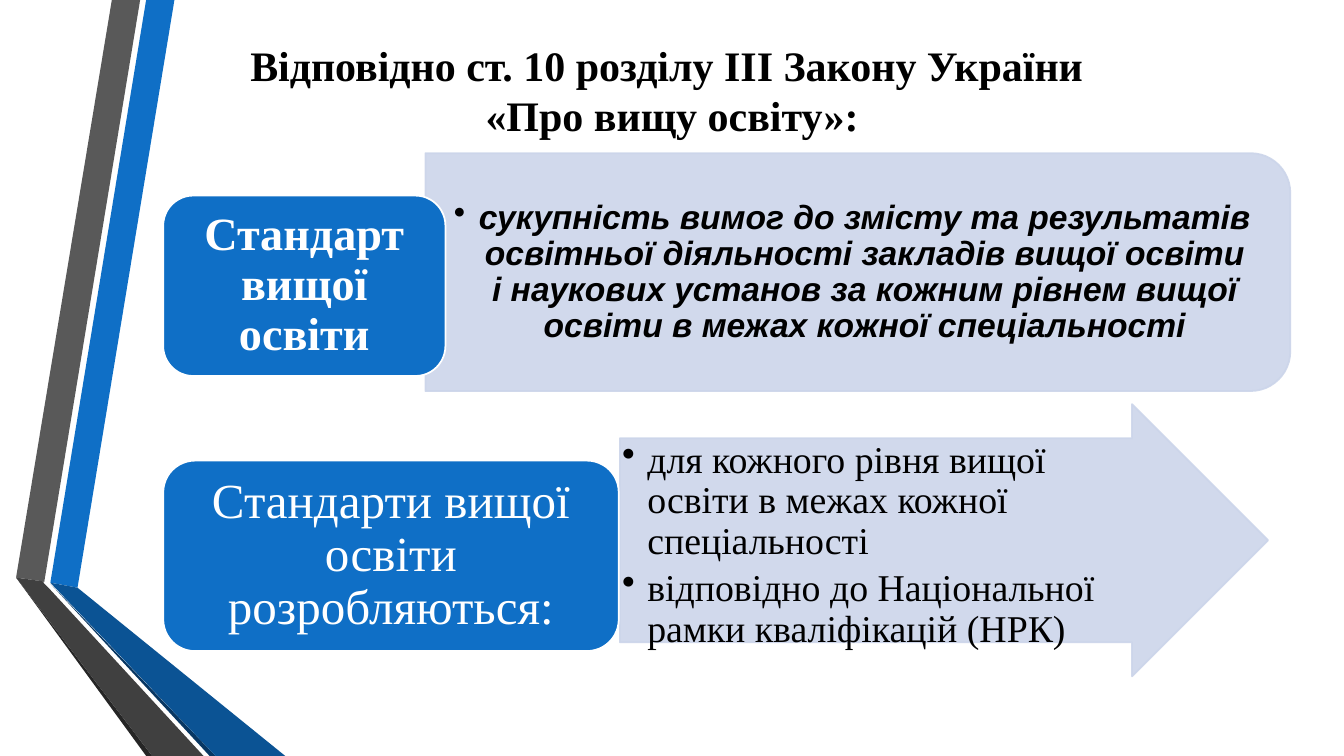
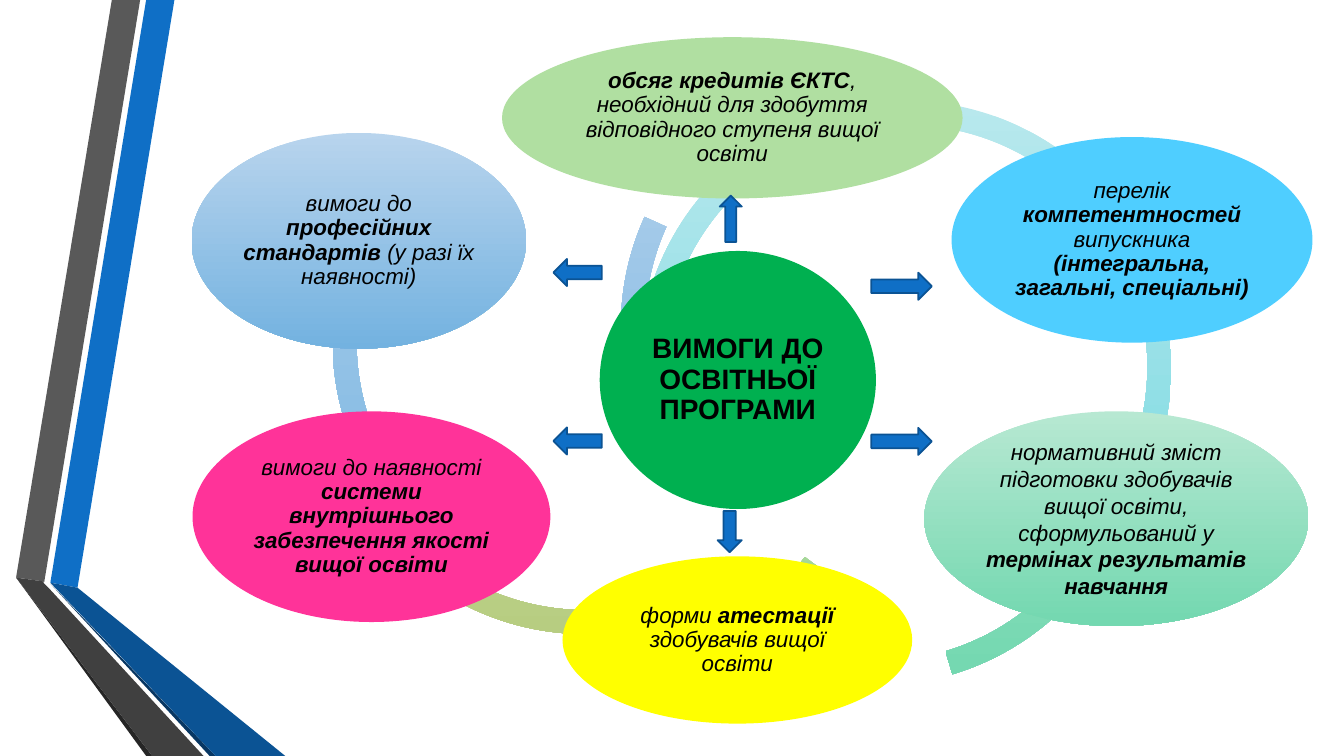
"""Build two slides on higher education standards and programme requirements."""
from typing import NamedTuple, Optional, Union

from pptx import Presentation
from pptx import util as u
from pptx.dml.color import RGBColor
from pptx.enum import shapes, text
from pptx.oxml.xmlchemy import OxmlElement
from pptx.shapes.autoshape import Shape
from pptx.slide import Slide

Pt = u.Pt
KIND = shapes.MSO_SHAPE
ALIGN = text.PP_ALIGN
ANCHOR = text.MSO_ANCHOR

BLACK = RGBColor(0x00, 0x00, 0x00)
WHITE = RGBColor(0xFF, 0xFF, 0xFF)
BLUE = RGBColor(0x0F, 0x6F, 0xC6)
DEEP_BLUE = RGBColor(0x0B, 0x53, 0x94)
NAVY = RGBColor(0x08, 0x37, 0x63)
GREY = RGBColor(0x59, 0x59, 0x59)
DARK_GREY = RGBColor(0x40, 0x40, 0x40)
CHARCOAL = RGBColor(0x26, 0x26, 0x26)
PALE_BLUE = RGBColor(0xCC, 0xD5, 0xEA)
GREEN = RGBColor(0x00, 0xB0, 0x50)
LIGHT_GREEN = RGBColor(0xB0, 0xDF, 0xA1)
SKY = RGBColor(0x4F, 0xCE, 0xFF)
YELLOW = RGBColor(0xFF, 0xFF, 0x00)
PINK = RGBColor(0xFF, 0x33, 0x99)

SERIF = "Times New Roman"
SANS = "Arial"
OUTLINE = 1.25


class Gradient(NamedTuple):
    top: RGBColor
    bottom: RGBColor


BLUE_FADE = Gradient(RGBColor(0xB8, 0xD4, 0xED), RGBColor(0x73, 0xB2, 0xE0))
OLIVE_FADE = Gradient(RGBColor(0xD6, 0xE2, 0xBC), RGBColor(0xB7, 0xCD, 0x81))
GREEN_FADE = Gradient(RGBColor(0xC9, 0xE6, 0xC3), RGBColor(0x9B, 0xD4, 0x8C))
MINT_FADE = Gradient(RGBColor(0xB7, 0xE8, 0xD2), RGBColor(0x73, 0xD8, 0xB0))
AQUA_FADE = Gradient(RGBColor(0xB8, 0xE8, 0xED), RGBColor(0x73, 0xD8, 0xE0))
Paint = Union[RGBColor, Gradient]


class Box(NamedTuple):
    left: float
    top: float
    width: float
    height: float


class Run(NamedTuple):
    words: str
    bold: bool = False


class Style(NamedTuple):
    size: float
    font: str = SERIF
    color: RGBColor = BLACK
    italic: bool = False
    spacing: float = 0.9
    align: ALIGN = ALIGN.CENTER
    anchor: ANCHOR = ANCHOR.MIDDLE
    insets: tuple[float, float, float, float] = (1.6, 1.6, 1.6, 1.6)
    bullet: bool = False


class Band(NamedTuple):
    color: RGBColor
    points: list[tuple[float, float]]


class Arc(NamedTuple):
    left: float
    top: float
    start: float
    end: float
    paint: Gradient


class Requirement(NamedTuple):
    box: Box
    paint: Paint
    runs: list[Run]
    style: Style


class Arrow(NamedTuple):
    kind: KIND
    box: Box


BANDS = [
    Band(BLUE, [(36, 416.2), (55.4, 419.8), (124.6, 0), (104.4, 0)]),
    Band(GREY, [(100.1, 0), (79.9, 0), (11.5, 412.6), (31.7, 415.4)]),
    Band(CHARCOAL, [(11.5, 412.6), (104.4, 540), (108.7, 540)]),
    Band(NAVY, [(36, 416.9), (149.8, 540), (154.1, 540)]),
    Band(DEEP_BLUE, [(36, 416.2), (154.1, 540), (203.8, 540), (55.4, 419.8)]),
    Band(DARK_GREY, [(145.4, 540), (34.6, 419.8), (31, 416.2), (31.7, 415.4),
                     (11.5, 412.6), (108.7, 540)]),
]

ARC_SIZE = 380.2
ARC_THICKNESS = 0.045
ARCS = [
    Arc(237.6, 54, 121.67, 180.52, BLUE_FADE),
    Arc(228.2, 72.7, 87.11, 125.63, OLIVE_FADE),
    Arc(245.5, 105.1, 36.41, 93.91, GREEN_FADE),
    Arc(435.6, 109.4, 13.45, 73.31, MINT_FADE),
    Arc(456.5, 72, 198.47, 21.39, AQUA_FADE),
    Arc(443.5, 43.2, 140.04, 204.34, BLUE_FADE),
]

NOTE = Style(16, SANS, italic=True)
REQUIREMENTS = [
    Requirement(Box(428.4, 179.3, 197.3, 184.3), GREEN,
                [Run("ВИМОГИ ДО ОСВІТНЬОЇ ПРОГРАМИ", True)], Style(20, SANS)),
    Requirement(Box(358.6, 26.6, 329, 115.2), LIGHT_GREEN,
                [Run("обсяг кредитів ЄКТС", True),
                 Run(", необхідний для здобуття відповідного ступеня вищої освіти")],
                NOTE),
    Requirement(Box(679.7, 97.9, 257.8, 146.9), SKY,
                [Run("перелік "), Run("компетентностей ", True), Run("випускника "),
                 Run("(інтегральна, загальні, спеціальні)", True)], NOTE),
    Requirement(Box(660.2, 293.8, 274.3, 153.4), MINT_FADE,
                [Run("нормативний зміст підготовки здобувачів вищої освіти, "
                     "сформульований у "),
                 Run("термінах результатів навчання", True)],
                NOTE._replace(spacing=1.0)),
    Requirement(Box(401.8, 397.4, 249.8, 119.5), YELLOW,
                [Run("форми "), Run("атестації ", True),
                 Run("здобувачів вищої освіти")], NOTE),
    Requirement(Box(137.5, 293.8, 255.6, 150.5), PINK,
                [Run("вимоги до наявності "),
                 Run("системи внутрішнього забезпечення якості вищої освіти", True)],
                NOTE),
    Requirement(Box(136.8, 95, 239, 154.1), BLUE_FADE,
                [Run("вимоги до "), Run("професійних стандартів ", True),
                 Run("(у разі їх наявності)")], NOTE),
]

ARROWS = [
    Arrow(KIND.UP_ARROW, Box(514.1, 139.7, 15.8, 33.1)),
    Arrow(KIND.RIGHT_ARROW, Box(622.4, 194.8, 43.2, 19.4)),
    Arrow(KIND.RIGHT_ARROW, Box(622.4, 305.6, 43.2, 19.4)),
    Arrow(KIND.DOWN_ARROW, Box(512.6, 365, 17.3, 29.5)),
    Arrow(KIND.LEFT_ARROW, Box(395.3, 185, 34.6, 19.4)),
    Arrow(KIND.LEFT_ARROW, Box(395.3, 305.3, 34.6, 19.4)),
]


def paint_shape(shape: Shape, paint: Paint, outline: Optional[RGBColor] = None) -> None:
    shape.shadow.inherit = False
    if isinstance(paint, Gradient):
        shape.fill.gradient()
        shape.fill.gradient_angle = 270
        for stop, color in zip(shape.fill.gradient_stops, paint):
            stop.color.rgb = color
    else:
        shape.fill.solid()
        shape.fill.fore_color.rgb = paint
    if outline is None:
        shape.line.fill.background()
    else:
        shape.line.color.rgb = outline
        shape.line.width = Pt(OUTLINE)


def add_preset(slide: Slide, kind: KIND, box: Box, paint: Paint,
               outline: Optional[RGBColor] = None) -> Shape:
    shape = slide.shapes.add_shape(kind, *map(Pt, box))
    paint_shape(shape, paint, outline)
    return shape


def soften(shape: Shape) -> None:
    for color in shape.element.spPr.iter("{*}srgbClr"):
        alpha = OxmlElement("a:alpha")
        alpha.set("val", "90000")
        color.append(alpha)


def write(shape: Shape, paragraphs: list[list[Run]], style: Style) -> None:
    frame = shape.text_frame
    frame.word_wrap = True
    frame.vertical_anchor = style.anchor
    (frame.margin_left, frame.margin_top,
     frame.margin_right, frame.margin_bottom) = map(Pt, style.insets)
    for index, runs in enumerate(paragraphs):
        paragraph = frame.paragraphs[0] if index == 0 else frame.add_paragraph()
        paragraph.alignment = style.align
        paragraph.line_spacing = style.spacing
        if style.bullet:
            paragraph.space_after = Pt(4)
            properties = paragraph._p.get_or_add_pPr()
            properties.set("marL", str(Pt(18)))
            properties.set("indent", str(Pt(-18)))
            mark = OxmlElement("a:buChar")
            mark.set("char", "•")
            properties.append(mark)
        for part in runs:
            for line, words in enumerate(part.words.split("\n")):
                if line:
                    paragraph.add_line_break()
                run = paragraph.add_run()
                run.text = words
                run.font.name = style.font
                run.font.size = Pt(style.size)
                run.font.bold = part.bold
                run.font.italic = style.italic
                run.font.color.rgb = style.color


def add_text(slide: Slide, box: Box, runs: list[Run], style: Style) -> None:
    write(slide.shapes.add_textbox(*map(Pt, box)), [runs], style)


def add_bands(slide: Slide) -> None:
    for band in BANDS:
        start, *rest = [(Pt(x), Pt(y)) for x, y in band.points]
        builder = slide.shapes.build_freeform(*start)
        builder.add_line_segments(rest, close=True)
        paint_shape(builder.convert_to_shape(), band.color)


def add_standards(slide: Slide) -> None:
    add_text(slide, Box(66.2, 28.8, 828, 70.6),
             [Run("Відповідно ст. 10 розділу ІІІ Закону України \n«Про вищу освіту»:", True)],
             Style(30, spacing=1.0, insets=(7.2, 3.6, 7.2, 3.6)))

    definition = add_preset(slide, KIND.ROUND_2_SAME_RECTANGLE,
                            Box(527.8, -114.5, 169.9, 617.8), PALE_BLUE, PALE_BLUE)
    definition.rotation = 90
    soften(definition)
    add_text(slide, Box(303.8, 118.1, 609.8, 153.4),
             [Run("сукупність вимог до змісту та результатів освітньої діяльності "
                  "закладів вищої освіти і наукових установ за кожним рівнем вищої "
                  "освіти в межах кожної спеціальності", True)],
             Style(24, SANS, italic=True, bullet=True, insets=(19.2, 9.6, 19.2, 9.6)))

    standard = add_preset(slide, KIND.ROUNDED_RECTANGLE,
                          Box(116.6, 139.7, 201.6, 128.9), BLUE, WHITE)
    write(standard, [[Run("Стандарт вищої освіти", True)]],
          Style(33, color=WHITE, insets=(10, 5, 10, 5)))

    basis = add_preset(slide, KIND.RIGHT_ARROW,
                       Box(442.8, 288.7, 463, 194.4), PALE_BLUE, PALE_BLUE)
    basis.adjustments[0] = 0.75
    basis.adjustments[1] = 0.5
    soften(basis)
    write(basis,
          [[Run("для кожного рівня вищої освіти в межах кожної спеціальності")],
           [Run("відповідно до Національної рамки кваліфікацій (НРК)")]],
          Style(27, align=ALIGN.LEFT, anchor=ANCHOR.TOP, bullet=True,
                insets=(1.6, 1.6, 50, 1.6)))

    development = add_preset(slide, KIND.ROUNDED_RECTANGLE,
                             Box(116.6, 329, 325.4, 136.1), BLUE, WHITE)
    write(development, [[Run("Стандарти вищої освіти розробляються:")]],
          Style(35, color=WHITE, insets=(10.8, 5, 10.8, 5)))


def add_requirements(slide: Slide) -> None:
    for arc in ARCS:
        link = add_preset(slide, KIND.BLOCK_ARC,
                          Box(arc.left, arc.top, ARC_SIZE, ARC_SIZE), arc.paint)
        link.adjustments[0] = arc.start * 0.6
        link.adjustments[1] = arc.end * 0.6
        link.adjustments[2] = ARC_THICKNESS
    for item in REQUIREMENTS:
        oval = add_preset(slide, KIND.OVAL, item.box, item.paint)
        write(oval, [item.runs], item.style)
    for arrow in ARROWS:
        add_preset(slide, arrow.kind, arrow.box, BLUE, DEEP_BLUE)


def main() -> None:
    deck = Presentation()
    deck.slide_width, deck.slide_height = Pt(960), Pt(540)
    for fill_slide in (add_standards, add_requirements):
        slide = deck.slides.add_slide(deck.slide_layouts[6])
        add_bands(slide)
        fill_slide(slide)
    deck.save("out.pptx")


if __name__ == "__main__":
    main()
